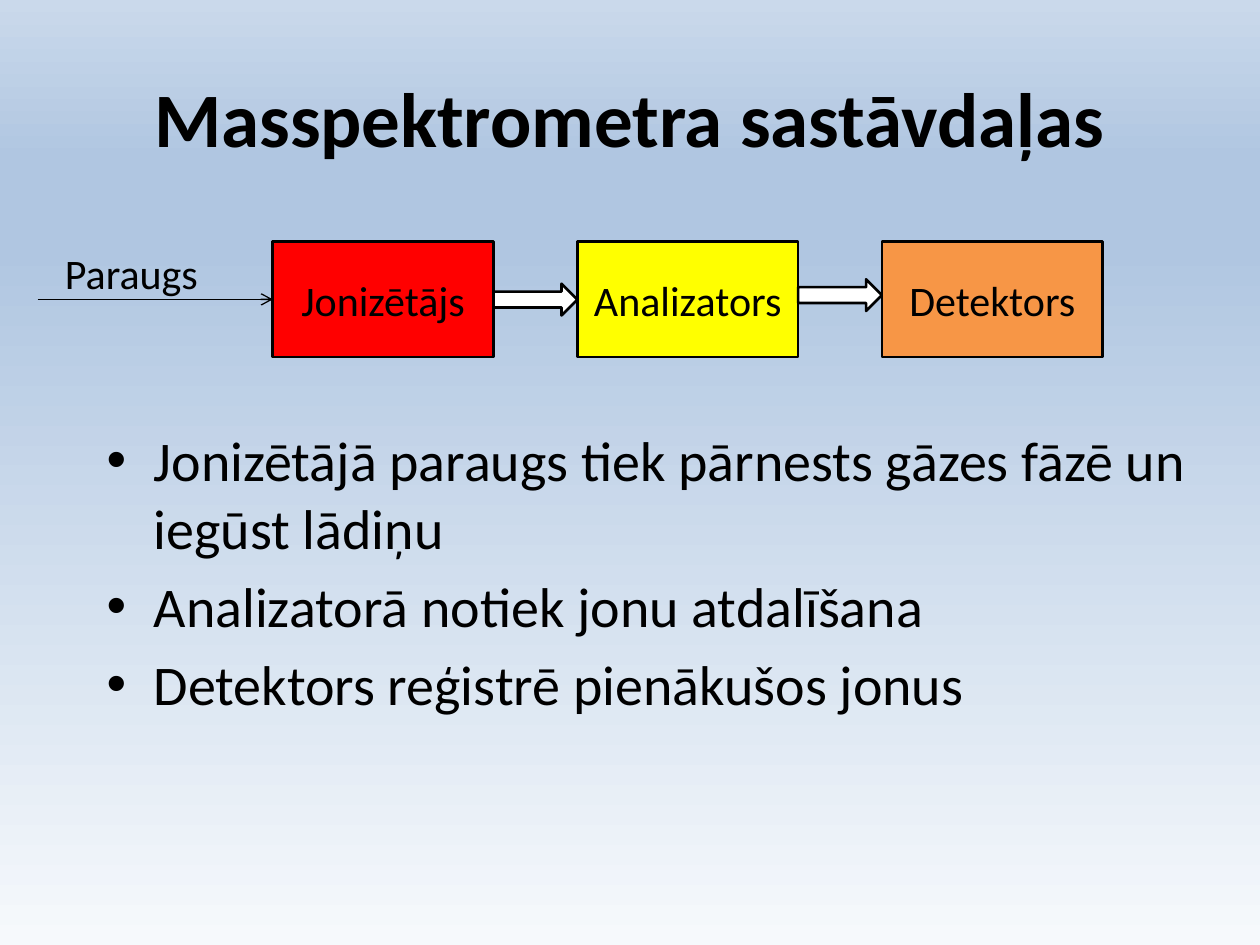
from lxml import etree
from pptx import Presentation
from pptx.dml.color import RGBColor
from pptx.enum import shapes, text
from pptx.oxml.ns import qn
from pptx.util import Cm, Pt

BLACK = RGBColor(0, 0, 0)
WHITE = RGBColor(255, 255, 255)
RED = RGBColor(255, 0, 0)
YELLOW = RGBColor(255, 255, 0)
ORANGE = RGBColor(0xF7, 0x96, 0x46)
SKY = [(0, "F6F9FC"), (74, "B0C6E1"), (83, "B0C6E1"), (100, "CAD9EB")]

TITLE = "Masspektrometra sastāvdaļas"
SAMPLE = "Paraugs"
PARTS = [("Jonizētājs", RED), ("Analizators", YELLOW), ("Detektors", ORANGE)]
NOTES = [
    "Jonizētājā paraugs tiek pārnests gāzes fāzē un iegūst lādiņu",
    "Analizatorā notiek jonu atdalīšana",
    "Detektors reģistrē pienākušos jonus",
]

# Flow row, in cm
LEFT, TOP, WIDE, HIGH, STEP = 5.5, 4.87, 4.45, 2.33, 6.14
ARROWS = [5.72, 5.63]  # tops of the block arrows
THICK = 0.64


def sub(parent, tag, **attrs):
    return etree.SubElement(parent, qn(tag), attrs)


def write(shape, lines, size=24, bold=False, align=text.PP_ALIGN.LEFT,
          anchor=text.MSO_ANCHOR.TOP, bullet=False):
    frame = shape.text_frame
    frame.word_wrap = True
    frame.vertical_anchor = anchor
    frame.text = "\n".join(lines)
    for para in frame.paragraphs:
        para.alignment = align
        font = para.runs[0].font
        font.name, font.size, font.bold = "Calibri", Pt(size), bold
        font.color.rgb = BLACK
        if bullet:
            para.space_before = Pt(size * 0.2)
            props = para._p.get_or_add_pPr()
            props.set("marL", str(Cm(0.95)))
            props.set("indent", str(-Cm(0.95)))
            sub(props, "a:buFont", typeface="Arial")
            sub(props, "a:buChar", char="•")


def block(slide, kind, x, y, w, h, fill):
    shape = slide.shapes.add_shape(kind, Cm(x), Cm(y), Cm(w), Cm(h))
    shape.shadow.inherit = False
    shape.fill.solid()
    shape.fill.fore_color.rgb = fill
    shape.line.color.rgb = BLACK
    shape.line.width = Pt(1.5)
    return shape


def label(slide, x, y, w, h, lines, **look):
    write(slide.shapes.add_textbox(Cm(x), Cm(y), Cm(w), Cm(h)), lines, **look)


def paint(slide):
    """Fill the background with the sky gradient, from the bottom up."""
    fill = slide.background.fill
    fill.gradient()
    fill.gradient_angle = 90
    stops = slide.element.find(".//" + qn("a:gsLst"))
    for old in list(stops):
        stops.remove(old)
    for place, tone in SKY:
        sub(sub(stops, "a:gs", pos=str(place * 1000)), "a:srgbClr", val=tone)


def feed(slide):
    """Draw the thin arrow that leads the sample into the first part."""
    y = Cm(TOP + HIGH / 2)
    line = slide.shapes.add_connector(
        shapes.MSO_CONNECTOR.STRAIGHT, Cm(0.76), y, Cm(LEFT), y)
    line.line.color.rgb = BLACK
    line.line.width = Pt(0.75)
    sub(line.line._get_or_add_ln(), "a:tailEnd", type="arrow")
    sub(line._element.spPr, "a:effectLst")


def main():
    deck = Presentation()
    deck.slide_width, deck.slide_height = Cm(25.4), Cm(19.05)
    slide = deck.slides.add_slide(deck.slide_layouts[6])
    paint(slide)
    mid = dict(align=text.PP_ALIGN.CENTER, anchor=text.MSO_ANCHOR.MIDDLE)
    label(slide, 1.27, 0.76, 22.86, 3.18, [TITLE], size=44, bold=True, **mid)
    label(slide, 1.9, 8.46, 22.86, 8.76, NOTES, size=32, bullet=True)

    for i, (name, fill) in enumerate(PARTS):
        box = block(slide, shapes.MSO_SHAPE.RECTANGLE,
                    LEFT + i * STEP, TOP, WIDE, HIGH, fill)
        write(box, [name], **mid)
    feed(slide)
    label(slide, 1.06, TOP, 3.39, 1.27, [SAMPLE])
    for i, y in enumerate(ARROWS):
        block(slide, shapes.MSO_SHAPE.RIGHT_ARROW,
              LEFT + i * STEP + WIDE, y, STEP - WIDE, THICK, WHITE)
    deck.save("out.pptx")


if __name__ == "__main__":
    main()
